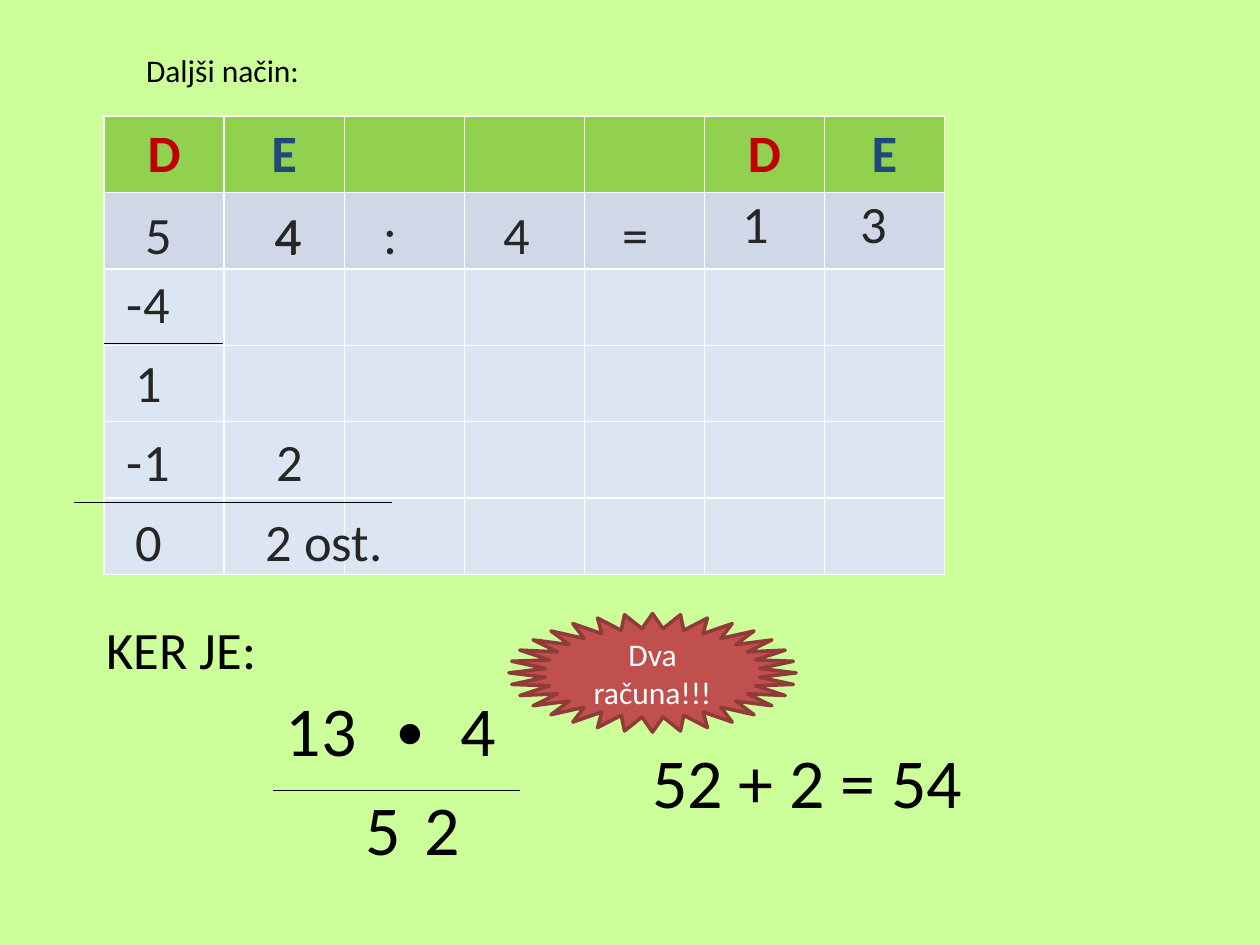
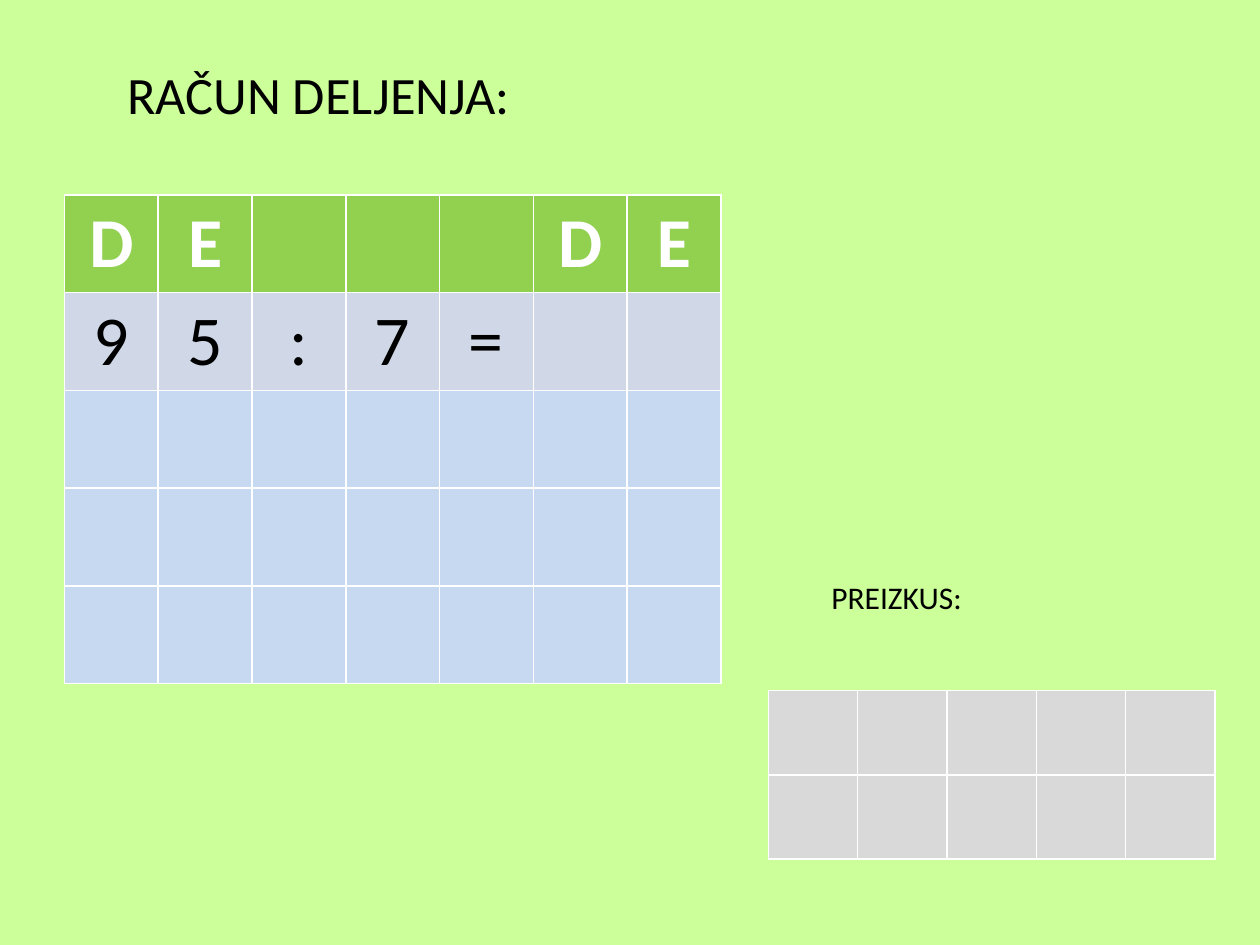
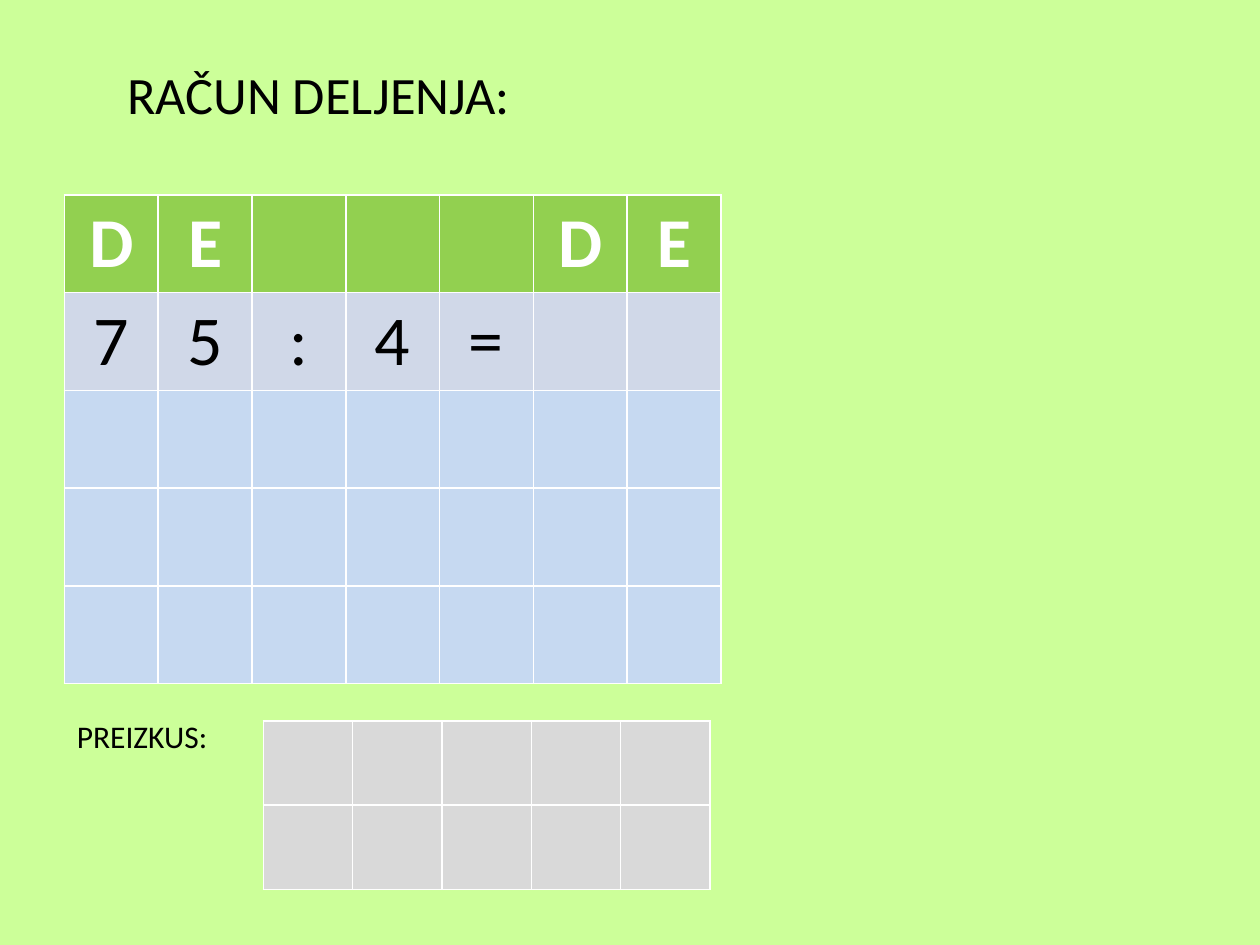
import pptx
import pptx.util
import pptx.dml.color
import pptx.enum.shapes
import pptx.enum.text
import pptx.oxml.ns
import lxml.etree

Cm = pptx.util.Cm
RGBColor = pptx.dml.color.RGBColor
ALIGN = pptx.enum.text.PP_ALIGN
ANCHOR = pptx.enum.text.MSO_ANCHOR

LIME = RGBColor(0xCC, 0xFF, 0x99)
GREEN = RGBColor(0x92, 0xD0, 0x50)
LILAC = RGBColor(0xD0, 0xD8, 0xE8)
PALE = RGBColor(0xDC, 0xE6, 0xF2)
SKY = RGBColor(0xC6, 0xD9, 0xF1)
GREY = RGBColor(0xD9, 0xD9, 0xD9)
RED = RGBColor(0xC0, 0x00, 0x00)
NAVY = RGBColor(0x1F, 0x49, 0x7D)
BRICK = RGBColor(0xC0, 0x50, 0x4D)
RUST = RGBColor(0x8E, 0x3B, 0x39)
DARK = RGBColor(0x26, 0x26, 0x26)
BLACK = RGBColor(0, 0, 0)
WHITE = RGBColor(0xFF, 0xFF, 0xFF)

FONT = "Calibri"
HIGH = {18: 1.02, 30: 1.54, 40: 1.96}  # box height in cm by text size
HEAD = ["D", "E", "", "", "", "D", "E"]


def add_xml(parent, tag, **attrs):
    return lxml.etree.SubElement(parent, pptx.oxml.ns.qn(tag), attrs)


def write(frame, text, size=30, color=BLACK, bold=False, align=ALIGN.LEFT, tabs=()):
    """Put one formatted paragraph in a frame; tabs are left stops in cm."""
    para = frame.paragraphs[0]
    para.alignment = align
    run = para.add_run()
    run.text = text
    run.font.name = FONT
    run.font.size = pptx.util.Pt(size)
    run.font.bold = bold
    run.font.color.rgb = color
    if tabs:
        stops = add_xml(para._p.get_or_add_pPr(), "a:tabLst")
        for stop in tabs:
            add_xml(stops, "a:tab", pos=str(int(Cm(stop))), algn="l")


class Deck:
    def __init__(self):
        self.prs = pptx.Presentation()
        self.prs.slide_width = Cm(25.4)
        self.prs.slide_height = Cm(19.05)
        back = self.prs.slide_master.background.fill
        back.solid()
        back.fore_color.rgb = LIME
        self.slide = None

    def start(self, title, left, top, width, size):
        """Begin a slide with its title."""
        self.slide = self.prs.slides.add_slide(self.prs.slide_layouts[5])
        shape = self.slide.shapes.title
        shape.left, shape.top = Cm(left), Cm(top)
        shape.width, shape.height = Cm(width), Cm(HIGH[size])
        self.fit(shape.text_frame, False)
        write(shape.text_frame, title, size=size)

    def fit(self, frame, wrap):
        frame.word_wrap = wrap
        frame.auto_size = pptx.enum.text.MSO_AUTO_SIZE.SHAPE_TO_FIT_TEXT
        frame.vertical_anchor = ANCHOR.TOP

    def text(self, text, left, top, width, wrap=True, size=30, **style):
        box = self.slide.shapes.add_textbox(
            Cm(left), Cm(top), Cm(width), Cm(HIGH[size]))
        self.fit(box.text_frame, wrap)
        write(box.text_frame, text, size=size, **style)

    def line(self, left, top, right):
        rule = self.slide.shapes.add_connector(
            pptx.enum.shapes.MSO_CONNECTOR.STRAIGHT,
            Cm(left), Cm(top), Cm(right), Cm(top))
        rule.line.color.rgb = BLACK
        rule.line.width = pptx.util.Pt(0.75)
        add_xml(rule._element.spPr, "a:effectLst")

    def star(self, text, left, top, width, height):
        star = self.slide.shapes.add_shape(
            pptx.enum.shapes.MSO_SHAPE.STAR_32_POINT,
            Cm(left), Cm(top), Cm(width), Cm(height))
        star.shadow.inherit = False
        star.fill.solid()
        star.fill.fore_color.rgb = BRICK
        star.line.color.rgb = RUST
        star.line.width = pptx.util.Pt(2)
        star.text_frame.word_wrap = True
        star.text_frame.vertical_anchor = ANCHOR.MIDDLE
        write(star.text_frame, text, size=18, color=WHITE, align=ALIGN.CENTER)

    def table(self, left, top, wide, high, fills, cols=7, rows=(), size=40, inks=None):
        """Draw a grid with one fill per row; inks colour header letters."""
        grid = self.slide.shapes.add_table(
            len(fills), cols, Cm(left), Cm(top),
            Cm(wide * cols), Cm(high * len(fills))).table
        grid.horz_banding = False
        for col in grid.columns:
            col.width = Cm(wide)
        for row, fill in zip(grid.rows, fills):
            row.height = Cm(high)
            for cell in row.cells:
                cell.fill.solid()
                cell.fill.fore_color.rgb = fill
        for r, words in enumerate(rows):
            for c, word in enumerate(words):
                if word:
                    ink = BLACK if r else (inks or {}).get(word, WHITE)
                    write(grid.cell(r, c).text_frame, word, size=size,
                          color=ink, bold=r == 0, align=ALIGN.CENTER)


def show_long(deck):
    deck.start("Daljši način:", 2.69, 0.91, 3.78, 18)
    deck.table(2.1, 2.34, 2.42, 1.54, [GREEN, LILAC] + [PALE] * 4,
               rows=[HEAD], size=30, inks={"D": RED, "E": NAVY})
    digits = [
        ("5", 2.69, 3.94), ("4", 5.31, 3.94), (":", 7.49, 3.94),
        ("4", 9.91, 3.94), ("=", 12.29, 3.94), ("1", 14.71, 3.73),
        ("3", 17.09, 3.73), ("1", 2.49, 6.93), ("4", 5.28, 3.96),
        ("0", 2.49, 10.13),
    ]
    for digit, left, top in digits:
        deck.text(digit, left, top, 1.4, color=DARK)
    deck.text("-4", 2.31, 5.33, 1.8, color=DARK)
    deck.text("-1\t2", 2.31, 8.53, 4.8, color=DARK, tabs=[3.01])
    deck.text("2 ost.", 5.11, 10.13, 6.4, color=DARK)
    deck.line(2.1, 6.93, 4.5)
    deck.line(1.5, 10.13, 7.9)

    deck.text("KER JE:", 1.9, 12.32, 14.6)
    deck.text("13\t∙\t4", 5.51, 13.72, 6.2, size=40, tabs=[2.07, 3.52])
    deck.line(5.51, 15.93, 10.49)
    deck.text("5", 7.11, 15.72, 1.4, size=40)
    deck.text("2", 8.31, 15.72, 1.4, size=40)
    deck.text("52 + 2 = 54", 12.9, 14.76, 6.81, wrap=False, size=40)
    deck.star("Dva računa!!!", 10.26, 12.37, 5.79, 2.39)


def show_task(deck, sum_row, label, check):
    """Add a division task; label and check are left-top places in cm."""
    deck.start("RAČUN DELJENJA:", 2.31, 1.12, 8.31, 30)
    deck.table(1.3, 3.93, 1.89, 1.97, [GREEN, LILAC] + [SKY] * 3,
               rows=[HEAD, sum_row])
    deck.table(*check, 1.8, 1.7, [GREY] * 2, cols=5)
    deck.text("PREIZKUS:", *label, 3.15, wrap=False, size=18)


def main():
    deck = Deck()
    show_long(deck)
    show_task(deck, "95:7=", label=(16.51, 11.53), check=(15.49, 13.92))
    show_task(deck, "75:4=", label=(1.3, 14.33), check=(5.31, 14.53))
    deck.prs.save("out.pptx")


if __name__ == "__main__":
    main()
